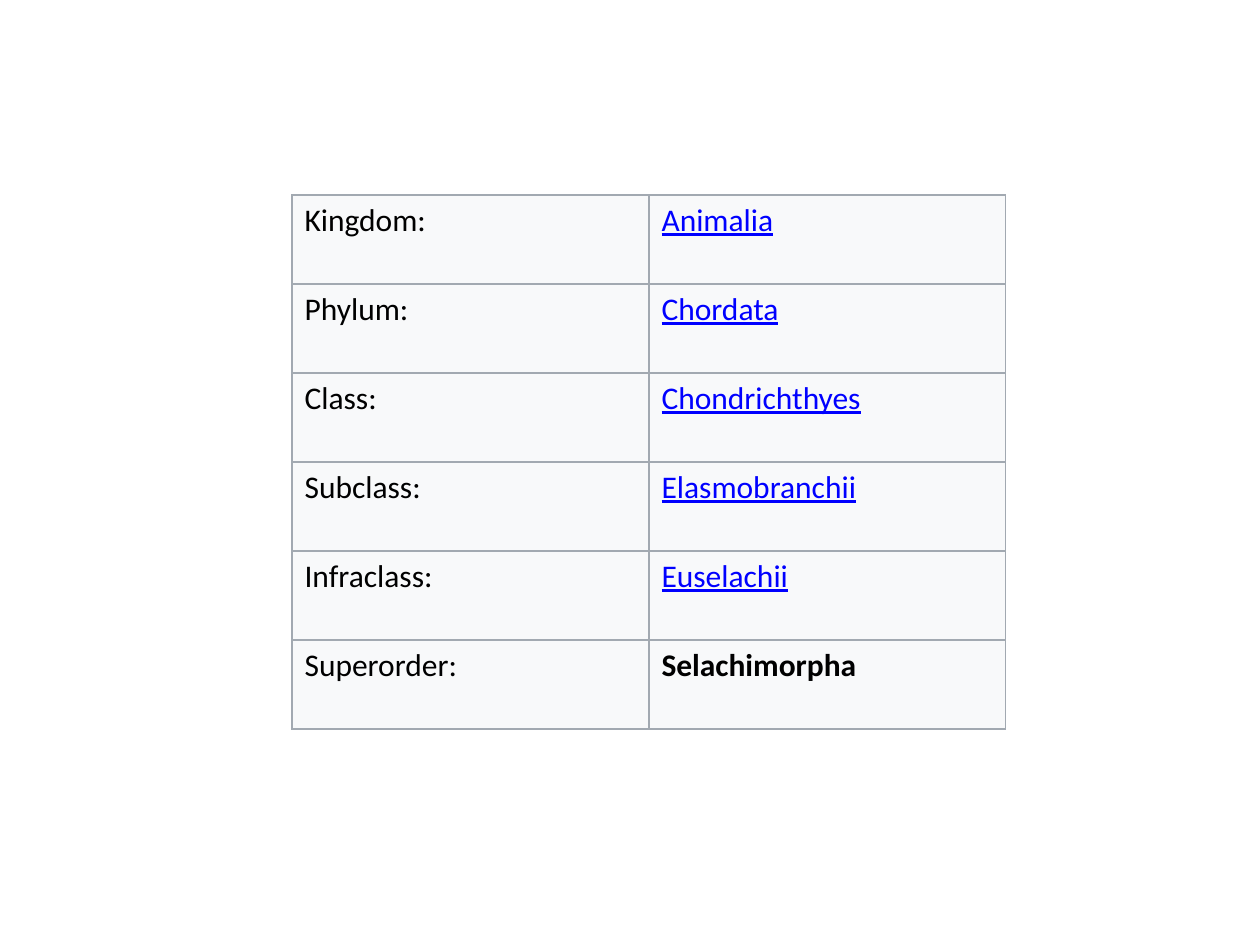
import lxml.etree
import pptx
import pptx.dml.color
import pptx.oxml.ns
import pptx.util

PX = 914400 // 126
COLORS = {"text": "000000", "link": "0000FF", "fill": "F8F9FA", "line": "A2A9B1"}
RANKS = [
    ("Kingdom:", "Animalia"),
    ("Phylum:", "Chordata"),
    ("Class:", "Chondrichthyes"),
    ("Subclass:", "Elasmobranchii"),
    ("Infraclass:", "Euselachii"),
    ("Superorder:", "Selachimorpha"),
]
LEFT, TOP, COL, ROW = 292, 195, 357, 89


def rgb(name):
    return pptx.dml.color.RGBColor.from_string(COLORS[name])


def add_borders(cell):
    """Line all four sides; borders must come before the cell's fill."""
    qn = pptx.oxml.ns.qn
    props = cell._tc.get_or_add_tcPr()
    for i, side in enumerate(("lnL", "lnR", "lnT", "lnB")):
        line = lxml.etree.Element(qn("a:" + side), w=str(pptx.util.Pt(0.75)))
        solid = lxml.etree.SubElement(line, qn("a:solidFill"))
        lxml.etree.SubElement(solid, qn("a:srgbClr"), val=COLORS["line"])
        props.insert(i, line)


deck = pptx.Presentation()
deck.slide_width = 1260 * PX
deck.slide_height = 945 * PX
slide = deck.slides.add_slide(deck.slide_layouts[6])

frame = slide.shapes.add_table(
    len(RANKS), 2, LEFT * PX, TOP * PX, 2 * COL * PX, len(RANKS) * ROW * PX
)
table = frame.table
table.first_row = False
table.horz_banding = False
for col in table.columns:
    col.width = COL * PX

for r, names in enumerate(RANKS):
    table.rows[r].height = ROW * PX
    for c, name in enumerate(names):
        cell = table.cell(r, c)
        cell.fill.solid()
        cell.fill.fore_color.rgb = rgb("fill")
        add_borders(cell)
        cell.text = name
        last = r == len(RANKS) - 1
        link = c == 1 and not last
        font = cell.text_frame.paragraphs[0].font
        font.name = "Calibri"
        font.size = pptx.util.Pt(18)
        font.color.rgb = rgb("link" if link else "text")
        font.underline = link
        font.bold = c == 1 and last

deck.save("out.pptx")
